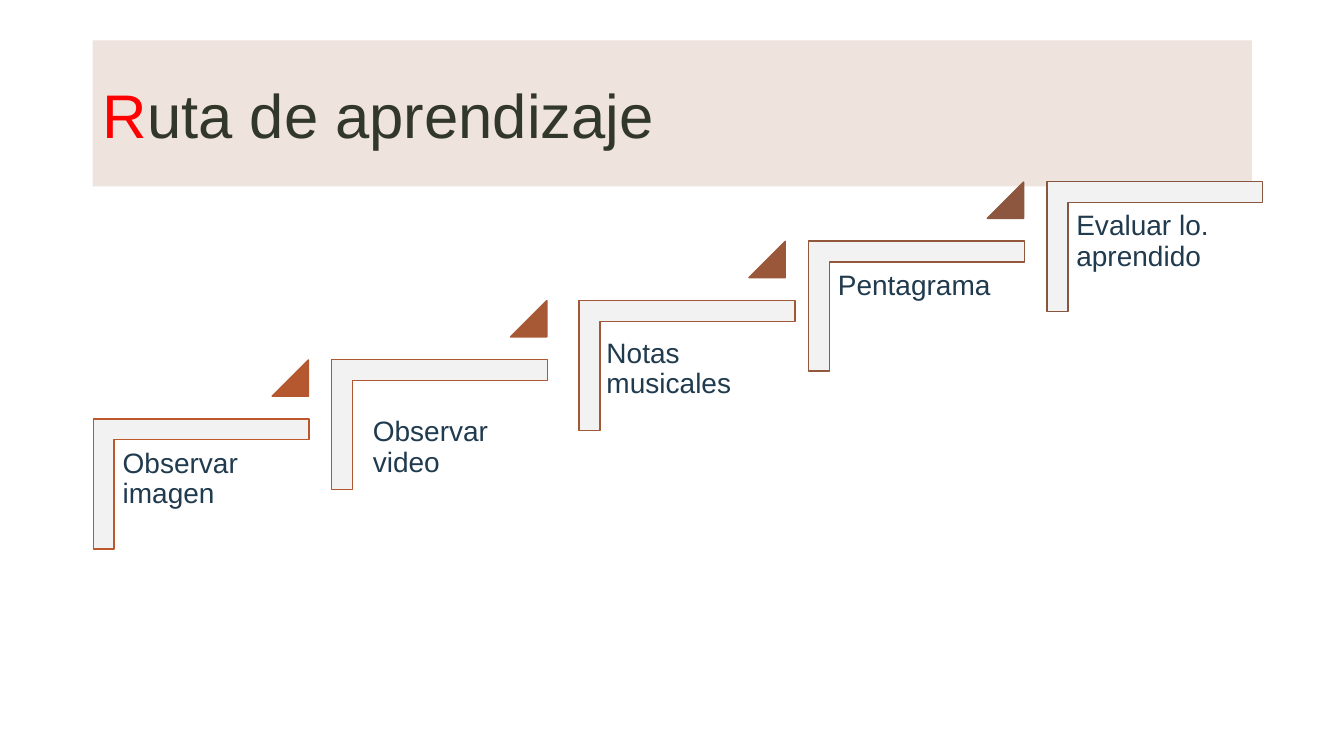
from pptx import Presentation
from pptx.dml.color import RGBColor
from pptx.enum.shapes import MSO_SHAPE as Preset
from pptx.enum.text import MSO_ANCHOR as Anchor, PP_ALIGN as Align
from pptx.oxml.ns import qn
from pptx.util import Pt
from lxml import etree

STEP_X, RISE = 170.3, 42.34
FIRST_X, FIRST_Y = 97.2, 268.6
BRACKET_W, BRACKET_H = 92.88, 154.08
ARROW_SIDE = 25.92

# step: label, bracket line, arrow colour, bracket shift, label shift
STEPS = [
    ("Observar imagen", "BD582C", "B6582F", 0, (0, 0)),
    ("Observar video", "AE5832", "A75835", 0, (8.4, 20)),
    ("Notas musicales", "A05837", "9A573A", 6.5, (5, 6.5)),
    ("Pentagrama", "93573C", "8C573E", 0, (0, 0)),
    ("Evaluar lo. aprendido", "865640", None, 0, (0, 0)),
]


def colour(value):
    return RGBColor.from_string(value)


def apply(target, values):
    for name, value in values.items():
        setattr(target, name, value)


def place(shape, left, top, width, height):
    lengths = {"left": left, "top": top, "width": width, "height": height}
    apply(shape, {name: Pt(value) for name, value in lengths.items()})


def write(paragraph, text, size, hue):
    run = paragraph.add_run()
    run.text = text
    apply(run.font, {"name": "Arial", "size": Pt(size), "bold": False})
    run.font.color.rgb = colour(hue)


def add_heading(slide):
    heading = slide.shapes.title
    place(heading, 66.24, 28.8, 828, 104.4)
    heading.fill.solid()
    heading.fill.fore_color.rgb = colour("EBDCD5")
    tint = heading.fill._xPr.find(qn("a:solidFill"))[0]
    etree.SubElement(tint, qn("a:alpha"), val="80000")
    heading.text_frame.vertical_anchor = Anchor.MIDDLE
    line = heading.text_frame.paragraphs[0]
    line.alignment = Align.LEFT
    write(line, "R", 44, "FF0000")
    write(line, "uta de aprendizaje", 44, "313829")


def add_preset(slide, preset, box, adjustments, fill, outline, rotation=0):
    shape = slide.shapes.add_shape(preset, 0, 0, 0, 0)
    place(shape, *box)
    for index, value in enumerate(adjustments):
        shape.adjustments[index] = value
    shape.rotation = rotation
    shape.shadow.inherit = False
    shape.fill.solid()
    shape.fill.fore_color.rgb = colour(fill)
    shape.line.color.rgb = colour(outline)
    shape.line.width = Pt(1)


def add_label(slide, text, left, top):
    label = slide.shapes.add_textbox(0, 0, 0, 0)
    place(label, left, top, 138.96, 121.68)
    frame = label.text_frame
    margins = ("margin_left", "margin_top", "margin_right", "margin_bottom")
    apply(frame, {"word_wrap": True, **dict.fromkeys(margins, Pt(6))})
    line = frame.paragraphs[0]
    line.line_spacing = 0.9
    write(line, text, 20, "203A4E")


def add_step(slide, index, text, outline, arrow, bracket_shift, label_shift):
    x, y = FIRST_X + index * STEP_X, FIRST_Y - index * RISE
    add_preset(slide, Preset.CORNER, (x + bracket_shift, y, BRACKET_W, BRACKET_H),
               (0.161, 0.161), "F2F2F2", outline, 90)
    shift_x, shift_y = label_shift
    add_label(slide, text, x - 15.6 + shift_x, y + 46 + shift_y)
    if arrow:
        add_preset(slide, Preset.ISOSCELES_TRIANGLE,
                   (x + 97.2, y - 11.5, ARROW_SIDE, ARROW_SIDE), (1,), arrow, arrow)


def main():
    deck = Presentation()
    apply(deck, {"slide_width": Pt(960), "slide_height": Pt(540)})
    slide = deck.slides.add_slide(deck.slide_layouts[5])
    add_heading(slide)
    for index, step in enumerate(STEPS):
        add_step(slide, index, *step)
    deck.save("out.pptx")


if __name__ == "__main__":
    main()
